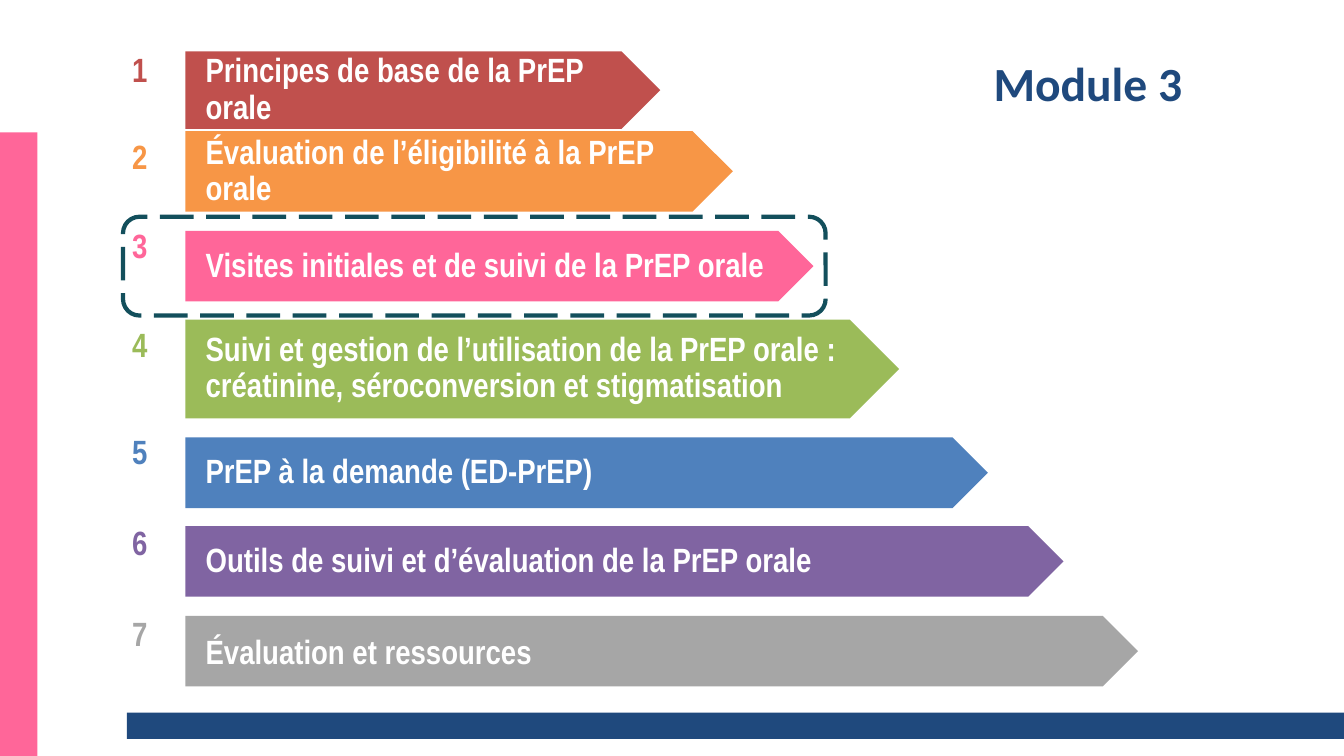
from dataclasses import dataclass

from pptx import Presentation
from pptx import util as u
from pptx.dml.color import RGBColor
from pptx.enum import dml, shapes, text


@dataclass(frozen=True)
class Theme:
    navy: str = "1F497D"
    pink: str = "FF6699"
    teal: str = "134F5C"
    white: str = "FFFFFF"
    head: str = "Calibri"
    body: str = "Arial Narrow"
    big: int = 34
    mid: int = 24


@dataclass(frozen=True)
class Box:
    """Shares of the slide, in percent of its width and height."""
    x: float
    y: float
    w: float
    h: float


@dataclass(frozen=True)
class Step:
    label: str
    color: str
    top: float
    width: float
    num_top: float
    height: float = 9.33
    space: float = 0.9


THEME = Theme()
KIND = shapes.MSO_SHAPE
BAR_X, NUM_X, NUM_W, NUM_H = 13.8, 9.1, 4.7, 6.67

STEPS = [
    Step("Principes de base de la PrEP orale", "C0504D", 6.8, 35.33, 5.87, 10.27),
    Step("Évaluation de l’éligibilité à la PrEP orale", "F79646",
         17.33, 40.73, 17.33, 10.67),
    Step("Visites initiales et de suivi de la PrEP orale", THEME.pink,
         30.53, 46.73, 29.07),
    Step("Suivi et gestion de l’utilisation de la PrEP orale : "
         "créatinine, séroconversion et stigmatisation", "9BBB59",
         42.27, 53.1, 42.13, 13.07),
    Step("PrEP à la demande (ED-PrEP)", "4F81BD", 57.87, 59.7, 56.4),
    Step("Outils de suivi et d’évaluation de la PrEP orale", "8064A2",
         69.6, 65.33, 68.4),
    Step("Évaluation et ressources", "A6A6A6", 81.47, 70.88, 80.4, space=1.0),
]

deck = Presentation()
deck.slide_width, deck.slide_height = u.Inches(13.333), u.Inches(7.5)
slide = deck.slides.add_slide(deck.slide_layouts[6])


def place(box: Box) -> tuple[int, int, int, int]:
    wide, high = deck.slide_width / 100, deck.slide_height / 100
    return (int(box.x * wide), int(box.y * high),
            int(box.w * wide), int(box.h * high))


def draw(kind: KIND, box: Box, fill: str | None = None):
    item = slide.shapes.add_shape(kind, *place(box))
    item.shadow.inherit = False
    item.line.fill.background()
    if fill:
        item.fill.solid()
        item.fill.fore_color.rgb = RGBColor.from_string(fill)
    else:
        item.fill.background()
    return item


def write(item, words: str, *, color: str, size: int = THEME.mid,
          font: str = THEME.body, align=text.PP_ALIGN.LEFT,
          anchor=text.MSO_ANCHOR.MIDDLE, inset: float = 0.1,
          space: float = 1.0) -> None:
    frame = item.text_frame
    frame.word_wrap = True
    frame.vertical_anchor = anchor
    frame.margin_left, frame.margin_right = u.Inches(inset), u.Inches(0.1)
    frame.margin_top = frame.margin_bottom = u.Inches(0.05)
    para = frame.paragraphs[0]
    para.alignment, para.line_spacing = align, space
    run = para.add_run()
    run.text = words
    run.font.name, run.font.size, run.font.bold = font, u.Pt(size), True
    run.font.color.rgb = RGBColor.from_string(color)


def add_step(num: int, step: Step) -> None:
    bar = draw(KIND.PENTAGON, Box(BAR_X, step.top, step.width, step.height),
               step.color)
    write(bar, step.label, color=THEME.white, inset=0.2, space=step.space)
    mark = slide.shapes.add_textbox(
        *place(Box(NUM_X, step.num_top, NUM_W, NUM_H)))
    write(mark, str(num), color=step.color, anchor=text.MSO_ANCHOR.TOP)


# Side and bottom bands
draw(KIND.RECTANGLE, Box(0, 17.5, 2.78, 82.5), THEME.pink)
draw(KIND.RECTANGLE, Box(9.45, 94.25, 90.55, 3.5), THEME.navy)

# Title
title = slide.shapes.add_textbox(*place(Box(66.9, 4.67, 28.1, 12.53)))
write(title, "Module 3", color=THEME.navy, size=THEME.big, font=THEME.head,
      align=text.PP_ALIGN.CENTER)

# Numbered module bars
for num, step in enumerate(STEPS, 1):
    add_step(num, step)

# Dashed frame around the current module
frame = draw(KIND.ROUNDED_RECTANGLE, Box(9.15, 28.67, 52.28, 13.07))
frame.line.color.rgb = RGBColor.from_string(THEME.teal)
frame.line.width = u.Pt(3)
frame.line.dash_style = dml.MSO_LINE.LONG_DASH

deck.save("out.pptx")
